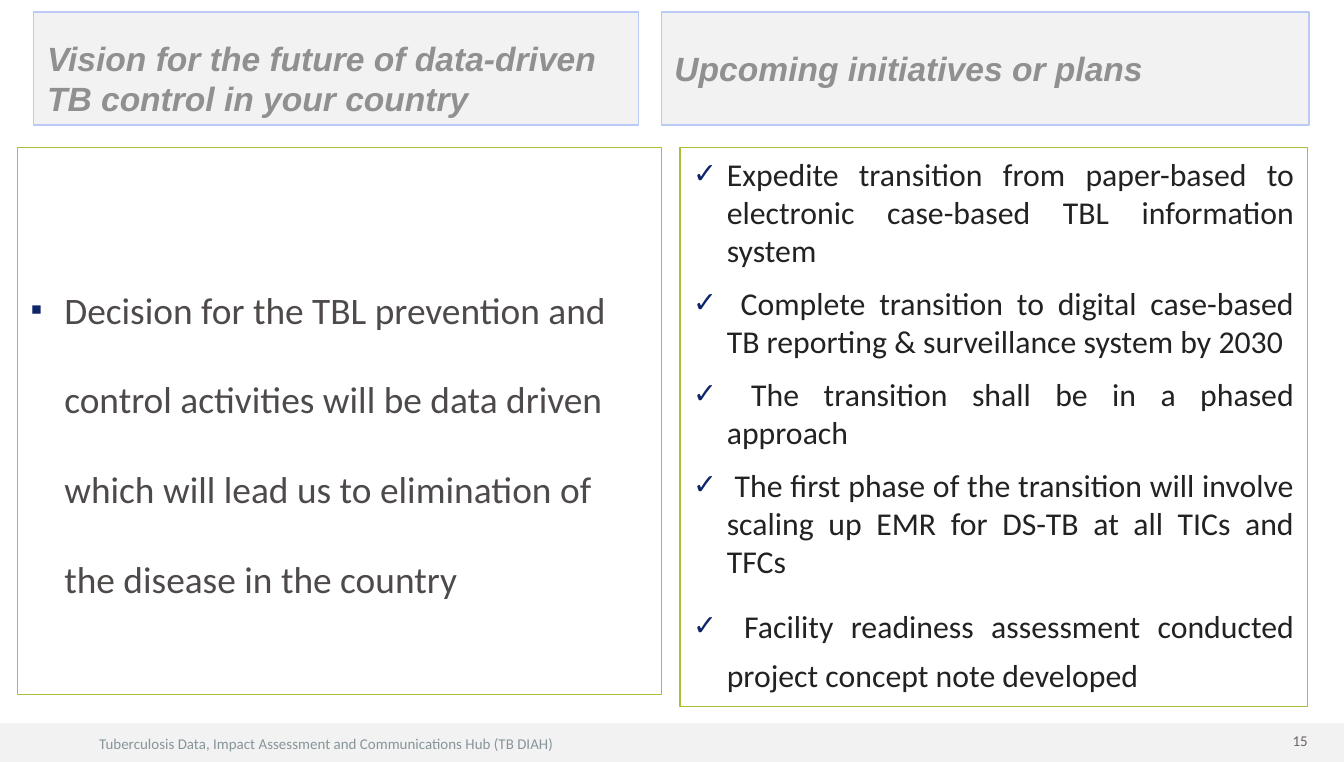
from dataclasses import dataclass

import pptx
import pptx.dml.color
import pptx.enum.shapes
import pptx.enum.text
import pptx.oxml
import pptx.oxml.ns
import pptx.util

PX = 9144
ALIGN = pptx.enum.text.PP_ALIGN
ANCHOR = pptx.enum.text.MSO_ANCHOR


@dataclass
class Style:
    font: str
    size: int
    color: str
    align: ALIGN = ALIGN.LEFT
    anchor: ANCHOR = ANCHOR.TOP
    bold: bool = False
    bullet: str = ""
    space_after: int = 0


@dataclass
class Panel:
    frame: tuple[int, int, int, int]
    style: Style
    lines: list[str]
    fill: str = ""
    line: str = ""
    spacings: tuple[float, ...] = ()
    is_title: bool = False


def rgb(value: str) -> pptx.dml.color.RGBColor:
    return pptx.dml.color.RGBColor.from_string(value)


def add_bullet(para, mark: str) -> None:
    properties = para._p.get_or_add_pPr()
    properties.set("marL", str(25 * PX))
    properties.set("indent", str(-25 * PX))
    namespace = pptx.oxml.ns.nsdecls("a")
    for element in (
        f'<a:buClr {namespace}><a:srgbClr val="0E256A"/></a:buClr>',
        f'<a:buSzPct {namespace} val="90000"/>',
        f'<a:buFont {namespace} typeface="Arial"/>',
        f'<a:buChar {namespace} char="{mark}"/>',
    ):
        properties.append(pptx.oxml.parse_xml(element))


def write_text(box, panel: Panel) -> None:
    style = panel.style
    frame = box.text_frame
    frame.word_wrap = True
    frame.auto_size = pptx.enum.text.MSO_AUTO_SIZE.NONE
    frame.vertical_anchor = style.anchor
    spacings = panel.spacings or (1.0,) * len(panel.lines)
    for index, (line, spacing) in enumerate(zip(panel.lines, spacings)):
        para = frame.add_paragraph() if index else frame.paragraphs[0]
        para.text = line
        para.alignment = style.align
        para.line_spacing = spacing
        para.space_before = pptx.util.Pt(0)
        para.space_after = pptx.util.Pt(style.space_after)
        if style.bullet:
            add_bullet(para, style.bullet)
        para.font.name = style.font
        para.font.size = pptx.util.Pt(style.size)
        para.font.bold = para.font.italic = style.bold
        para.font.color.rgb = rgb(style.color)


def draw_panel(page, panel: Panel) -> None:
    left, top, width, height = (length * PX for length in panel.frame)
    if panel.is_title:
        box = page.shapes.title
        box.left, box.top, box.width, box.height = left, top, width, height
    elif panel.fill or panel.line:
        rectangle = pptx.enum.shapes.MSO_SHAPE.RECTANGLE
        box = page.shapes.add_shape(rectangle, left, top, width, height)
        box.shadow.inherit = False
    else:
        box = page.shapes.add_textbox(left, top, width, height)
    if panel.fill:
        box.fill.solid()
        box.fill.fore_color.rgb = rgb(panel.fill)
    else:
        box.fill.background()
    if panel.line:
        box.line.color.rgb = rgb(panel.line)
        box.line.width = pptx.util.Pt(0.75)
    else:
        box.line.fill.background()
    if panel.lines:
        write_text(box, panel)


GREY, BLUE, GREEN = "F2F2F2", "BAC9F6", "A7BF39"
TITLE = Style("Arial", 18, "909090", anchor=ANCHOR.BOTTOM, bold=True)
HEADING = Style("Arial", 18, "909090", anchor=ANCHOR.MIDDLE, bold=True)
VISION = Style("Calibri", 20, "4E4A49", anchor=ANCHOR.MIDDLE, bullet="▪")
PLANS = Style("Calibri", 17, "222222", ALIGN.JUSTIFY, bullet="✓", space_after=8)
FOOTER = Style("Calibri", 8, "879499")
NUMBER = Style("Calibri", 8, "6C6463", ALIGN.RIGHT, ANCHOR.MIDDLE)

PANELS = [
    Panel((0, 538, 1000, 29), FOOTER, [], fill=GREY),
    Panel((64, 542, 500, 24), FOOTER,
          ["Tuberculosis Data, Impact Assessment and Communications Hub (TB DIAH)"]),
    Panel((25, 9, 450, 84), TITLE,
          ["Vision for the future of data-driven TB control in your country"],
          GREY, BLUE, is_title=True),
    Panel((13, 110, 479, 407), VISION,
          ["Decision for the TBL prevention and control activities will be data driven "
           "which will lead us to elimination of the disease in the country"],
          line=GREEN, spacings=(2.0,)),
    Panel((492, 9, 482, 84), HEADING, ["Upcoming initiatives or plans"], GREY, BLUE),
    Panel((506, 110, 467, 416), PLANS,
          ["Expedite transition from paper-based to electronic case-based TBL "
           "information system ",
           " Complete transition to digital case-based TB reporting & surveillance "
           "system by 2030",
           " The transition shall be in a phased approach ",
           " The first phase of the transition will involve scaling up EMR for DS-TB "
           "at all TICs and TFCs",
           " Facility readiness assessment conducted project concept note developed "],
          line=GREEN, spacings=(1.0, 1.0, 1.0, 1.0, 1.3)),
    Panel((750, 539, 233, 24), NUMBER, ["15"]),
]


def main() -> None:
    deck = pptx.Presentation()
    deck.slide_width, deck.slide_height = 1000 * PX, 567 * PX
    page = deck.slides.add_slide(deck.slide_layouts[5])
    for panel in PANELS:
        draw_panel(page, panel)
    deck.save("out.pptx")


if __name__ == "__main__":
    main()
